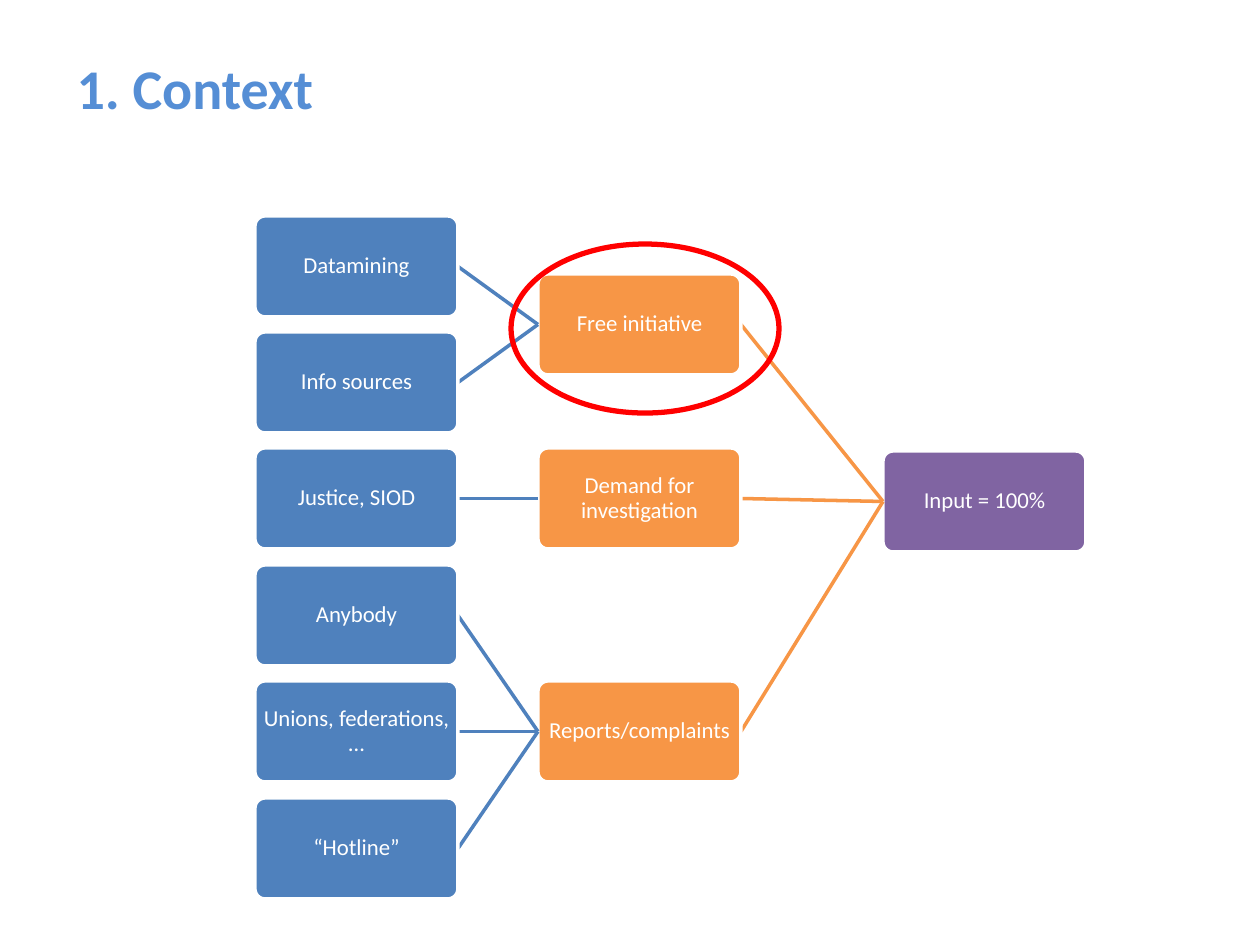
from dataclasses import dataclass

from lxml import etree
from pptx import Presentation
from pptx.dml.color import RGBColor
from pptx.enum.shapes import MSO_CONNECTOR, MSO_SHAPE
from pptx.enum.text import MSO_ANCHOR, MSO_AUTO_SIZE, PP_ALIGN
from pptx.oxml.ns import qn
from pptx.util import Emu, Pt

LINE = MSO_CONNECTOR.STRAIGHT
ROUND, OVAL = MSO_SHAPE.ROUNDED_RECTANGLE, MSO_SHAPE.OVAL
TOP, MIDDLE = MSO_ANCHOR.TOP, MSO_ANCHOR.MIDDLE
LEFT, CENTER = PP_ALIGN.LEFT, PP_ALIGN.CENTER
FIT = MSO_AUTO_SIZE.SHAPE_TO_FIT_TEXT
LEFT_SIDE, RIGHT_SIDE = 1, 3


@dataclass(frozen=True)
class Theme:
    font: str = "Calibri"
    title: str = "558ED5"
    white: str = "FFFFFF"
    ring: str = "FF0000"
    levels: tuple = ("8064A2", "F79646", "4F81BD")
    title_size: int = 32
    box_size: int = 13
    line: int = 2
    ring_line: int = 3


THEME = Theme()

# Layout in px, 126 to the inch
BOX_W, BOX_H = 203, 101
COLS = (883, 538, 255)
FIRST, LAST, ROWS = 216, 798, 6
ROOT_TOP = 451

ROOT = "Input = 100%"
GROUPS = (
    ("Free initiative", ("Datamining", "Info sources")),
    ("Demand for investigation", ("Justice, SIOD",)),
    ("Reports/complaints", ("Anybody", "Unions, federations, …", "“Hotline”")),
)


def px(count):
    return Emu(round(count * 914400 / 126))


def color(code):
    return RGBColor.from_string(code)


def row_top(row):
    return FIRST + (LAST - FIRST) * row // (ROWS - 1)


def add_text(frame, text, size, code, align, anchor, bold=False):
    frame.word_wrap = True
    frame.vertical_anchor = anchor
    para = frame.paragraphs[0]
    para.alignment = align
    run = para.add_run()
    run.text = text
    font = run.font
    font.name, font.size, font.bold = THEME.font, Pt(size), bold
    font.color.rgb = color(code)
    return para


def add_title(slide, text):
    title = slide.shapes.title
    title.left, title.top, title.width, title.height = map(px, (64, 47, 1013, 81))
    add_text(title.text_frame, text, THEME.title_size, THEME.title, LEFT, TOP, True)
    title.text_frame.auto_size = FIT


def add_box(slide, text, level, top):
    box = slide.shapes.add_shape(ROUND, px(COLS[level]), px(top), px(BOX_W), px(BOX_H))
    box.shadow.inherit = False
    box.adjustments[0] = 0.1
    box.fill.solid()
    box.fill.fore_color.rgb = color(THEME.levels[level])
    box.line.color.rgb = color(THEME.white)
    box.line.width = Pt(THEME.line)
    frame = box.text_frame
    frame.margin_left = frame.margin_right = px(1)
    frame.margin_top = frame.margin_bottom = px(1)
    para = add_text(frame, text, THEME.box_size, THEME.white, CENTER, MIDDLE)
    para.line_spacing = 0.9
    return box


def add_child(slide, parent, text, level, top):
    # The link lies above its parent and below its child
    link = slide.shapes.add_connector(LINE, 0, 0, 0, 0)
    link.line.color.rgb = color(THEME.levels[level])
    link.line.width = Pt(THEME.line)
    etree.SubElement(link._element.spPr, qn("a:effectLst"))
    child = add_box(slide, text, level, top)
    link.begin_connect(parent, LEFT_SIDE)
    link.end_connect(child, RIGHT_SIDE)
    return child


def add_tree(slide):
    root = add_box(slide, ROOT, 0, ROOT_TOP)
    row = 0
    for name, leaves in GROUPS:
        tops = [row_top(row + i) for i in range(len(leaves))]
        # Each group is centred on its leaves
        group = add_child(slide, root, name, 1, (tops[0] + tops[-1]) // 2)
        for leaf, top in zip(leaves, tops):
            add_child(slide, group, leaf, 2, top)
        row += len(leaves)


def add_ring(slide):
    ring = slide.shapes.add_shape(OVAL, px(511), px(244), px(268), px(169))
    ring.shadow.inherit = False
    ring.fill.background()
    ring.line.color.rgb = color(THEME.ring)
    ring.line.width = Pt(THEME.ring_line)


def main():
    deck = Presentation()
    deck.slide_width, deck.slide_height = px(1260), px(945)
    slide = deck.slides.add_slide(deck.slide_layouts[5])
    add_tree(slide)
    add_title(slide, "1. Context")
    add_ring(slide)
    deck.save("out.pptx")


if __name__ == "__main__":
    main()
